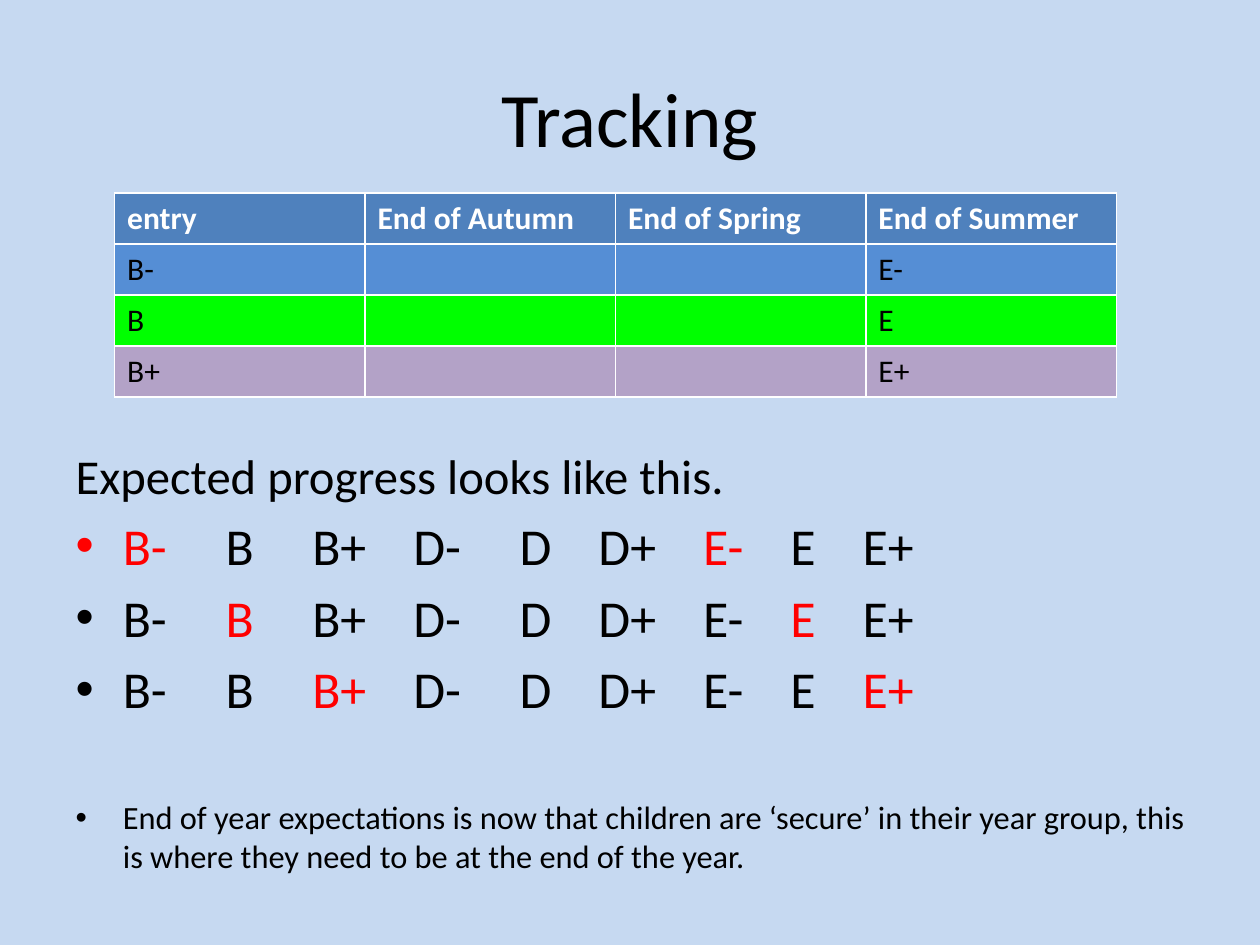
from dataclasses import dataclass

from pptx import Presentation
from pptx import util as u
from pptx.dml.color import RGBColor
from pptx.enum import text


@dataclass(frozen=True)
class Theme:
    """Colours, type sizes and font of the slide."""
    font: str = "Calibri"
    ground: str = "C6D9F1"
    ink: str = "000000"
    marked: str = "FF0000"
    header_ink: str = "FFFFFF"
    header_fill: str = "4F81BD"
    row_fills: tuple = ("558ED5", "00FF00", "B3A2C7")
    title: float = 44
    lead: float = 27.8
    step: float = 29.6
    note: float = 18.5
    cell: float = 18


@dataclass(frozen=True)
class Box:
    """Left, top, width and height in inches."""
    left: float
    top: float
    width: float
    height: float

    def lengths(self):
        """Return the four lengths in slide units."""
        return [u.Inches(n) for n in (self.left, self.top, self.width, self.height)]


THEME = Theme()
WIDTH, HEIGHT = 10, 7.5
STEPS = ["B-", "B", "B+", "D-", "D", "D+", "E-", "E", "E+"]
GAPS = [26.8, 26.8, 20.1, 26.8, 20.1, 20.1, 20.1, 20.1]
YEAR_OF_STEPS = 6
HEADERS = ["entry", "End of Autumn", "End of Spring", "End of Summer"]


def add_text(para, words, size, color=THEME.ink, bold=False, tracking=0):
    """Append a formatted span to a paragraph."""
    span = para.add_run()
    span.text = words
    span.font.name = THEME.font
    span.font.size = u.Pt(size)
    span.font.bold = bold
    span.font.color.rgb = RGBColor.from_string(color)
    if tracking:
        span.font._element.set("spc", str(round(tracking * 100)))


def place(shape, box):
    """Move a placeholder into a box."""
    shape.left, shape.top, shape.width, shape.height = box.lengths()


def fill_title(shape, box):
    """Write the slide title."""
    place(shape, box)
    frame = shape.text_frame
    frame.vertical_anchor = text.MSO_ANCHOR.MIDDLE
    para = frame.paragraphs[0]
    para.alignment = text.PP_ALIGN.CENTER
    add_text(para, "Tracking", THEME.title)


def add_tracking_table(page, box):
    """Draw the table of entry and end-of-year levels."""
    rows = [HEADERS] + [[level, "", "", level.replace("B", "E")] for level in ("B-", "B", "B+")]
    table = page.shapes.add_table(len(rows), len(HEADERS), *box.lengths()).table
    table.horz_banding = False
    fills = (THEME.header_fill,) + THEME.row_fills
    for r, (row, fill) in enumerate(zip(rows, fills)):
        for c, words in enumerate(row):
            cell = table.cell(r, c)
            cell.fill.solid()
            cell.fill.fore_color.rgb = RGBColor.from_string(fill)
            if words:
                add_text(cell.text_frame.paragraphs[0], words, THEME.cell, bold=r == 0,
                         color=THEME.ink if r else THEME.header_ink)


def add_progress(para, start):
    """Write the steps, marking the start and the step a year later."""
    para.space_before = u.Pt(5.4)
    for i, step in enumerate(STEPS):
        if i:
            add_text(para, " ", THEME.step, tracking=GAPS[i - 1])
        marked = i in (start, start + YEAR_OF_STEPS)
        add_text(para, step, THEME.step, THEME.marked if marked else THEME.ink)


def fill_body(shape, box):
    """Write the lead line, the progress rows and the closing note."""
    place(shape, box)
    frame = shape.text_frame
    frame.auto_size = text.MSO_AUTO_SIZE.NONE
    lead = frame.paragraphs[0]
    lead.space_before = u.Pt(0)
    properties = lead._p.get_or_add_pPr()
    properties.set("marL", "0")
    properties.set("indent", "0")
    properties.insert_element_before(
        properties.makeelement(properties.tag.replace("pPr", "buNone"), {}),
        "a:tabLst", "a:defRPr", "a:extLst")
    add_text(lead, "Expected progress looks like this.", THEME.lead)
    for start in range(3):
        add_progress(frame.add_paragraph(), start)
    note = frame.add_paragraph()
    note.space_before = u.Pt(44.7)
    add_text(note, "End of year expectations is now that children are ‘secure’ in their "
             "year group, this is where they need to be at the end of the year.", THEME.note)


def main():
    """Build and save the deck."""
    deck = Presentation()
    deck.slide_width, deck.slide_height = u.Inches(WIDTH), u.Inches(HEIGHT)
    page = deck.slides.add_slide(deck.slide_layouts[1])
    page.background.fill.solid()
    page.background.fill.fore_color.rgb = RGBColor.from_string(THEME.ground)
    margin = WIDTH * 0.05
    inner = WIDTH - 2 * margin
    fill_title(page.shapes.title, Box(margin, HEIGHT * 0.04, inner, 1.25))
    fill_body(page.placeholders[1], Box(margin, 3.49, inner, 3.5))
    add_tracking_table(page, Box(0.91, 1.53, 7.95, 1.62))
    deck.save("out.pptx")


if __name__ == "__main__":
    main()
